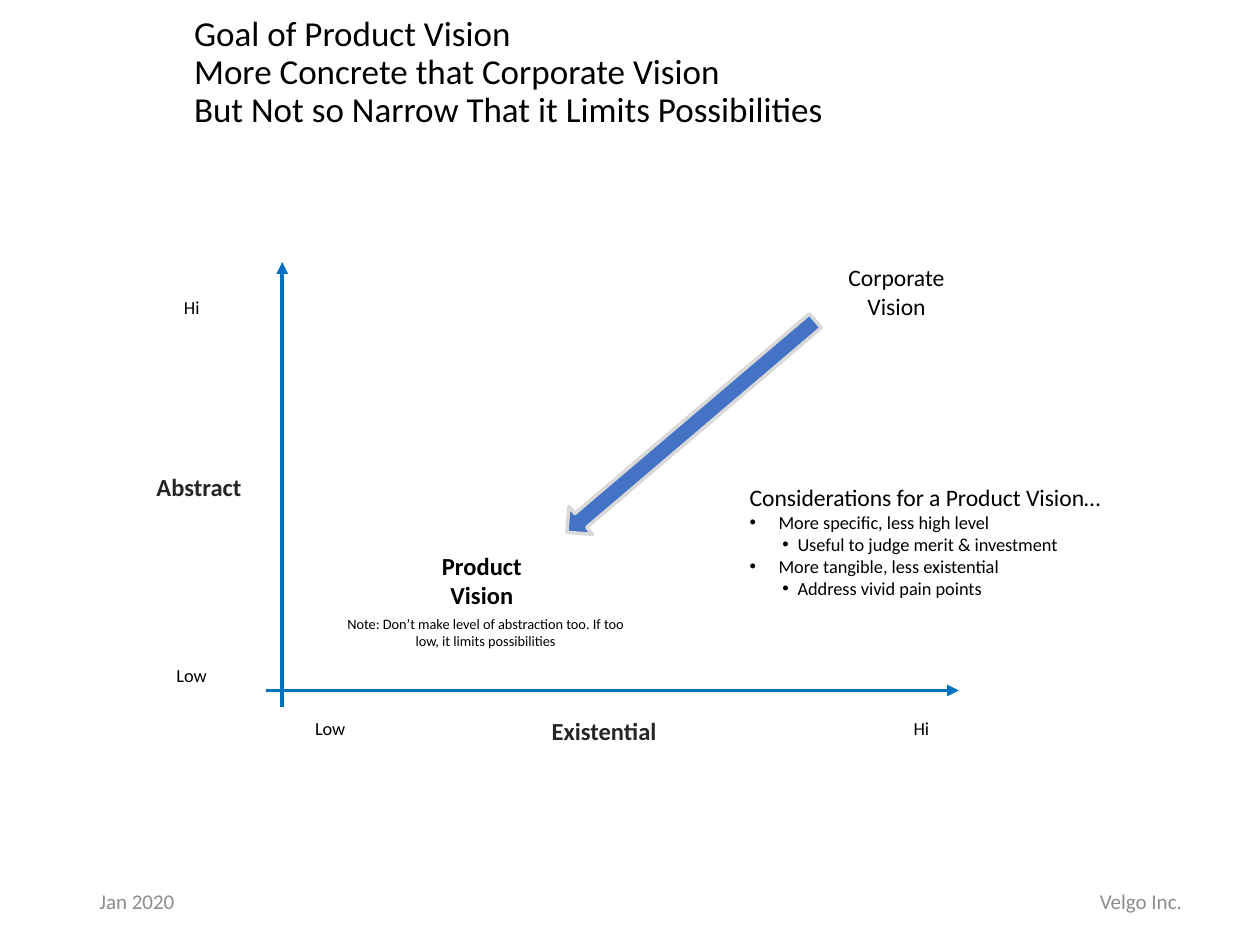
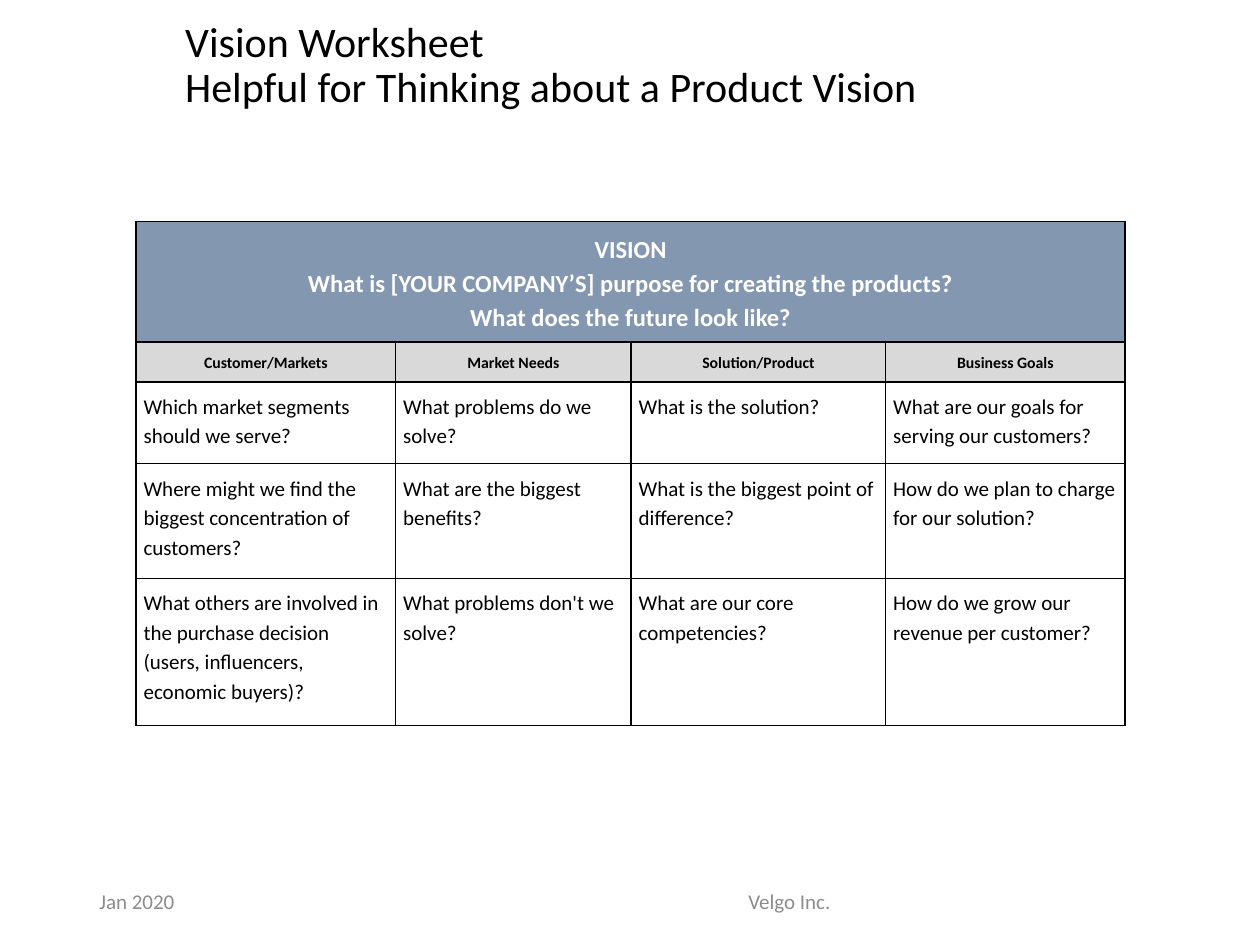
from lxml import etree
from pptx import Presentation
from pptx.dml.color import RGBColor
from pptx.enum.shapes import MSO_CONNECTOR, MSO_SHAPE
from pptx.enum.text import MSO_ANCHOR, MSO_AUTO_SIZE, PP_ALIGN
from pptx.oxml.ns import qn
from pptx.util import Inches, Pt

LEFT, CENTER, RIGHT = PP_ALIGN.LEFT, PP_ALIGN.CENTER, PP_ALIGN.RIGHT
TOP, MIDDLE = MSO_ANCHOR.TOP, MSO_ANCHOR.MIDDLE

BLACK = RGBColor(0x00, 0x00, 0x00)
WHITE = RGBColor(0xFF, 0xFF, 0xFF)
DARK = RGBColor(0x26, 0x26, 0x26)
GREY = RGBColor(0x8C, 0x8C, 0x8C)
PALE = RGBColor(0xD9, 0xD9, 0xD9)
AXIS_BLUE = RGBColor(0x00, 0x70, 0xC0)
ARROW_BLUE = RGBColor(0x44, 0x72, 0xC4)
SLATE = RGBColor(0x84, 0x97, 0xB0)
FONT = "Calibri"

# ---- Content ----
GOAL_TITLE = ["Goal of Product Vision", "More Concrete that Corporate Vision",
              "But Not so Narrow That it Limits Possibilities"]
WORKSHEET_TITLE = ["Vision Worksheet", "Helpful for Thinking about a Product Vision"]
FOOTER_DATE, FOOTER_COMPANY = "Jan 2020", "Velgo Inc."

AXIS_NAME = {"size": 14, "color": DARK, "bold": True, "align": CENTER}
AXIS_END = {"size": 10.5}
CHART_LABELS = [  # text, (left, top, width, height), format
    ("Existential", (4.21, 5.64, 1.17, 0.32), AXIS_NAME),
    ("Abstract", (1.06, 3.71, 1.04, 0.27), AXIS_NAME),
    ("Hi", (1.39, 2.31, 0.29, 0.25), AXIS_END),
    ("Low", (1.33, 5.23, 0.42, 0.25), AXIS_END),
    ("Hi", (7.18, 5.65, 0.29, 0.25), AXIS_END),
    ("Low", (2.43, 5.65, 0.42, 0.25), AXIS_END),
    ("Product Vision", (3.21, 4.33, 1.23, 0.25),
     {"size": 14, "bold": True, "align": CENTER}),
    ("Corporate Vision", (6.48, 2.05, 1.27, 0.53), {"size": 13.5, "align": CENTER}),
    ("Note: Don’t make level of abstraction too. If too low, it limits possibilities",
     (2.64, 4.84, 2.43, 0.54), {"size": 8.2, "align": CENTER}),
]
CONSIDERATIONS = "Considerations for a Product Vision…"
POINTS = [  # indent level, text
    (0, "More specific, less high level"),
    (1, "Useful to judge merit & investment"),
    (0, "More tangible, less existential"),
    (1, "Address vivid pain points"),
]
VISION_HEADER = ["VISION", "What is [YOUR COMPANY’S] purpose for creating the products?",
                 "What does the future look like?"]
WORKSHEET = {
    "Customer/Markets": [
        "Which market segments should we serve?",
        "Where might we find the biggest concentration of customers?",
        "What others are involved in the purchase decision "
        "(users, influencers, economic buyers)?"],
    "Market Needs": [
        "What problems do we solve?", "What are the biggest benefits?",
        "What problems don't we solve?"],
    "Solution/Product": [
        "What is the solution?", "What is the biggest point of difference?",
        "What are our core competencies?"],
    "Business Goals": [
        "What are our goals for serving our customers?",
        "How do we plan to charge for our solution?",
        "How do we grow our revenue per customer?"],
}

# ---- Geometry, in inches ----
ORIGIN_X, ORIGIN_Y = 2.24, 5.48
AXIS_RIGHT, AXIS_TOP, OVERHANG = 7.61, 2.08, 0.13
ARROW_BOX, ARROW_TURN = (5.34, 2.09, 0.29, 2.59), 49.6
POINTS_BOX = (5.88, 3.79, 3.87, 1.15)
POINT_INDENTS = [(0.23, -0.23), (0.38, -0.12)]  # left margin, first line
TABLE_AT = (1.08, 1.76)
COLUMN_WIDTHS = [2.06, 1.87, 2.02, 1.9]
ROW_HEIGHTS = [0.91, 0.31, 0.65, 0.91, 1.17]
FOOTER_TOP, FOOTER_HEIGHT = 6.95, 0.4


def inches(values):
    return [Inches(v) for v in values]


def format_paragraph(paragraph, size, color=BLACK, bold=False, align=LEFT, spacing=None):
    paragraph.alignment = align
    if spacing:
        paragraph.line_spacing = spacing
    values = {"name": FONT, "size": Pt(size), "bold": bold}
    for attribute, value in values.items():
        setattr(paragraph.font, attribute, value)
    paragraph.font.color.rgb = color


def format_frame(frame, side, end, anchor):
    values = {"margin_left": Inches(side), "margin_right": Inches(side),
              "margin_top": Inches(end), "margin_bottom": Inches(end),
              "vertical_anchor": anchor, "word_wrap": True,
              "auto_size": MSO_AUTO_SIZE.NONE}
    for attribute, value in values.items():
        setattr(frame, attribute, value)


def add_label(slide, text, box, style, side=0.07, end=0.04, anchor=TOP):
    frame = slide.shapes.add_textbox(*inches(box)).text_frame
    format_frame(frame, side, end, anchor)
    frame.text = text
    format_paragraph(frame.paragraphs[0], **style)
    return frame


def start_slide(prs, title_lines, title_box, title_size, company_left):
    """Title-only slide with the shared title style and footers."""
    slide = prs.slides.add_slide(prs.slide_layouts[5])
    title = slide.shapes.title
    title.left, title.top, title.width, title.height = inches(title_box)
    format_frame(title.text_frame, 0.15, 0.15, MIDDLE)
    title.text_frame.text = "\v".join(title_lines)
    format_paragraph(title.text_frame.paragraphs[0], title_size, spacing=0.9)
    for text, left, width, align in [(FOOTER_DATE, 0.69, 2.25, LEFT),
                                     (FOOTER_COMPANY, company_left, 3.38, RIGHT)]:
        add_label(slide, text, (left, FOOTER_TOP, width, FOOTER_HEIGHT),
                  {"size": 12, "color": GREY, "align": align}, 0.1, 0.05, MIDDLE)
    return slide


def add_axis(slide, start, end):
    axis = slide.shapes.add_connector(MSO_CONNECTOR.STRAIGHT, *inches(start + end))
    axis.line.color.rgb = AXIS_BLUE
    axis.line.width = Pt(2.25)
    etree.SubElement(axis.line._get_or_add_ln(), qn("a:tailEnd"), type="triangle")
    etree.SubElement(axis._element.spPr, qn("a:effectLst"))


def add_bullet(paragraph, margin, first_line):
    props = paragraph._p.get_or_add_pPr()
    props.set("marL", str(Inches(margin)))
    props.set("indent", str(Inches(first_line)))
    color = etree.SubElement(props, qn("a:buClr"))
    etree.SubElement(color, qn("a:srgbClr"), val=str(BLACK))
    etree.SubElement(props, qn("a:buFont"), typeface="Arial")
    etree.SubElement(props, qn("a:buChar"), char="•")


def border_cell(cell):
    props = cell._tc.get_or_add_tcPr()
    for position, side in enumerate(("a:lnL", "a:lnR", "a:lnT", "a:lnB")):
        line = etree.Element(qn(side), w=str(Pt(1)))
        fill = etree.SubElement(line, qn("a:solidFill"))
        etree.SubElement(fill, qn("a:srgbClr"), val=str(BLACK))
        props.insert(position, line)


def fill_cell(cell, lines, fill, **style):
    cell.margin_left = cell.margin_right = Inches(0.06)
    cell.margin_top = cell.margin_bottom = Inches(0.07)
    cell.text = "\n".join(lines)
    for paragraph in cell.text_frame.paragraphs:
        format_paragraph(paragraph, spacing=1.15, **style)
    cell.fill.solid()
    cell.fill.fore_color.rgb = fill


def build_goal(prs):
    slide = start_slide(prs, GOAL_TITLE, (1.39, 0.34, 8, 0.48), 20, 6.1)

    # Axes and their labels
    add_axis(slide, (ORIGIN_X - OVERHANG, ORIGIN_Y), (AXIS_RIGHT, ORIGIN_Y))
    add_axis(slide, (ORIGIN_X, ORIGIN_Y + OVERHANG), (ORIGIN_X, AXIS_TOP))
    for text, box, style in CHART_LABELS:
        add_label(slide, text, box, style)

    # Arrow from corporate to product vision
    arrow = slide.shapes.add_shape(MSO_SHAPE.DOWN_ARROW, *inches(ARROW_BOX))
    arrow.rotation = ARROW_TURN
    arrow.shadow.inherit = False
    arrow.fill.solid()
    arrow.fill.fore_color.rgb = ARROW_BLUE
    arrow.line.color.rgb = PALE
    arrow.line.width = Pt(2)

    # Considerations list
    frame = add_label(slide, CONSIDERATIONS, POINTS_BOX, {"size": 13.5})
    for level, text in POINTS:
        point = frame.add_paragraph()
        point.text = text
        add_bullet(point, *POINT_INDENTS[level])
        format_paragraph(point, 10.5)


def build_worksheet(prs):
    slide = start_slide(prs, WORKSHEET_TITLE, (1.32, 0.26, 6.56, 0.53), 24, 3.31)
    size = (sum(COLUMN_WIDTHS), sum(ROW_HEIGHTS))
    table = slide.shapes.add_table(len(ROW_HEIGHTS), len(COLUMN_WIDTHS),
                                   *inches(TABLE_AT + size)).table
    table.first_row = table.horz_banding = False
    for column, width in zip(table.columns, COLUMN_WIDTHS):
        column.width = Inches(width)
    for row, height in zip(table.rows, ROW_HEIGHTS):
        row.height = Inches(height)

    # Vision band, column heads, then the questions
    table.cell(0, 0).merge(table.cell(0, len(COLUMN_WIDTHS) - 1))
    fill_cell(table.cell(0, 0), VISION_HEADER, SLATE,
              size=14, color=WHITE, bold=True, align=CENTER)
    for col, (topic, questions) in enumerate(WORKSHEET.items()):
        fill_cell(table.cell(1, col), [topic], PALE, size=9, bold=True, align=CENTER)
        for row, question in enumerate(questions, start=2):
            fill_cell(table.cell(row, col), [question], WHITE, size=12)
    for cell in table.iter_cells():
        border_cell(cell)


def main():
    prs = Presentation()
    prs.slide_width, prs.slide_height = Inches(10), Inches(7.5)
    build_goal(prs)
    build_worksheet(prs)
    prs.save("out.pptx")


if __name__ == "__main__":
    main()
